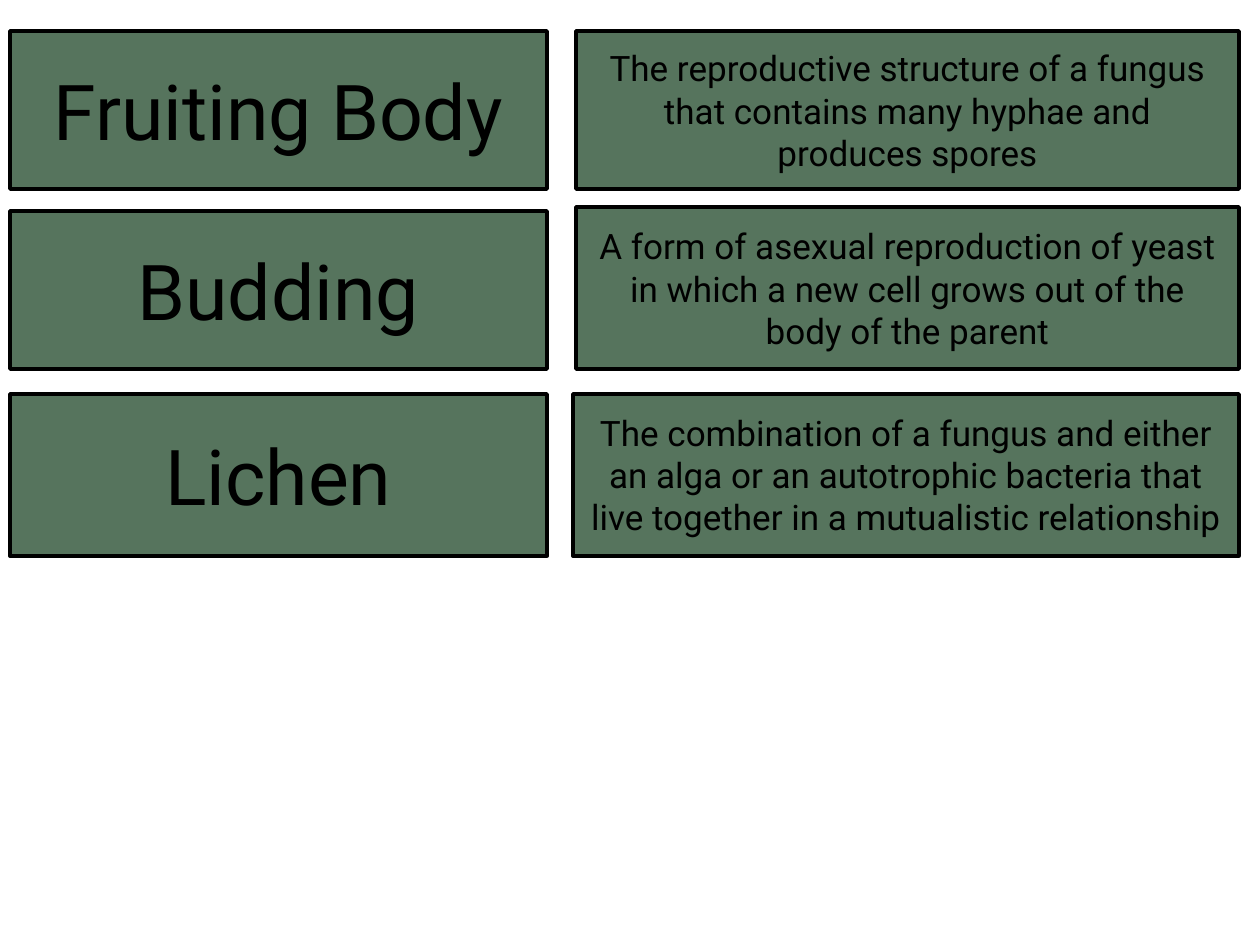
from dataclasses import dataclass

from pptx import Presentation
from pptx.dml.color import RGBColor
from pptx.enum.shapes import MSO_SHAPE
from pptx.enum.text import MSO_ANCHOR, PP_ALIGN
from pptx.util import Emu, Pt

PX = 914400 // 126


@dataclass(frozen=True)
class Theme:
    fill: RGBColor = RGBColor(0x56, 0x74, 0x5D)
    ink: RGBColor = RGBColor(0, 0, 0)
    font: str = "Roboto"
    term_size: int = 44
    meaning_size: int = 20
    border: int = 2


THEME = Theme()
TERM_LEFT, TERM_WIDTH = 10, 537
MEANING_RIGHT = 1239

CARDS = [
    {
        "term": "Fruiting Body",
        "meaning": "The reproductive structure of a fungus that contains many hyphae and produces spores",
        "term_top": 31, "meaning_left": 576, "meaning_top": 31, "bottom": 189,
    },
    {
        "term": "Budding",
        "meaning": "A form of asexual reproduction of yeast in which a new cell grows out of the body of the parent",
        "term_top": 211, "meaning_left": 576, "meaning_top": 207, "bottom": 369,
    },
    {
        "term": "Lichen",
        "meaning": "The combination of a fungus and either an alga or an autotrophic bacteria that live together in a mutualistic relationship",
        "term_top": 394, "meaning_left": 573, "meaning_top": 394, "bottom": 556,
    },
]


def px(length):
    return Emu(length * PX)


def add_box(page, text, size, left, top, right, bottom):
    box = page.shapes.add_shape(
        MSO_SHAPE.FLOWCHART_PROCESS, px(left), px(top), px(right - left), px(bottom - top)
    )
    box.shadow.inherit = False
    box.fill.solid()
    box.fill.fore_color.rgb = THEME.fill
    box.line.color.rgb = THEME.ink
    box.line.width = Pt(THEME.border)
    frame = box.text_frame
    frame.word_wrap = True
    frame.vertical_anchor = MSO_ANCHOR.MIDDLE
    frame.text = text
    para = frame.paragraphs[0]
    para.alignment = PP_ALIGN.CENTER
    font = para.runs[0].font
    font.name = THEME.font
    font.size = Pt(size)
    font.color.rgb = THEME.ink


def main():
    deck = Presentation()
    deck.slide_width, deck.slide_height = px(1260), px(945)
    page = deck.slides.add_slide(deck.slide_layouts[6])
    for card in CARDS:
        add_box(page, card["term"], THEME.term_size,
                TERM_LEFT, card["term_top"], TERM_LEFT + TERM_WIDTH, card["bottom"])
        add_box(page, card["meaning"], THEME.meaning_size,
                card["meaning_left"], card["meaning_top"], MEANING_RIGHT, card["bottom"])
    deck.save("out.pptx")


if __name__ == "__main__":
    main()
